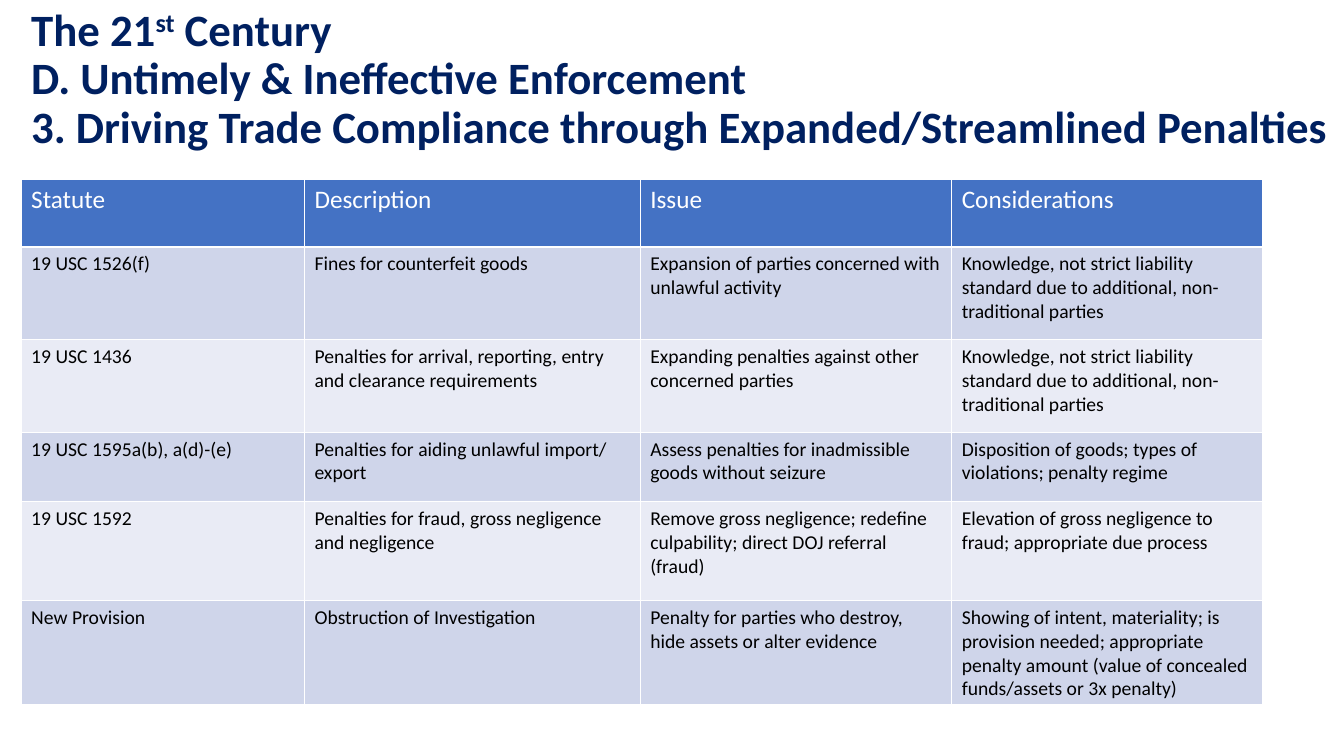
"""Build a slide tabulating expanded and streamlined trade penalties."""
from dataclasses import dataclass

from pptx import Presentation
from pptx.dml.color import RGBColor as Color
from pptx.enum.text import MSO_ANCHOR as Anchor
from pptx.util import Inches, Pt

TITLE_START = ("The 21", "st", " Century")
TITLE_LINES = (
    "D. Untimely & Ineffective Enforcement",
    "3. Driving Trade Compliance through Expanded/Streamlined Penalties",
)
KNOWLEDGE = "Knowledge, not strict liability standard due to additional, non-traditional parties"
PENALTIES = (
    ("Statute", "Description", "Issue", "Considerations"),
    ("19 USC 1526(f)", "Fines for counterfeit goods",
     "Expansion of parties concerned with unlawful activity", KNOWLEDGE),
    ("19 USC 1436", "Penalties for arrival, reporting, entry and clearance requirements",
     "Expanding penalties against other concerned parties", KNOWLEDGE),
    ("19 USC 1595a(b), a(d)-(e)", "Penalties for aiding unlawful import/ export",
     "Assess penalties for inadmissible goods without seizure",
     "Disposition of goods; types of violations; penalty regime"),
    ("19 USC 1592", "Penalties for fraud, gross negligence and negligence",
     "Remove gross negligence; redefine culpability; direct DOJ referral (fraud)",
     "Elevation of gross negligence to fraud; appropriate due process"),
    ("New Provision", "Obstruction of Investigation",
     "Penalty for parties who destroy, hide assets or alter evidence",
     "Showing of intent, materiality; is provision needed; appropriate penalty amount "
     "(value of concealed funds/assets or 3x penalty)"),
)
COLUMN_WIDTHS = (2.81, 3.33, 3.09, 3.08)
ROW_HEIGHTS = (0.67, 0.92, 0.92, 0.69, 0.98, 0.98)
LEFT, TITLE_TOP, TABLE_TOP = 0.21, 0.07, 1.78


@dataclass(frozen=True)
class Theme:
    font: str = "Calibri"
    title: str = "002060"
    header: str = "4472C4"
    header_text: str = "FFFFFF"
    body_text: str = "000000"
    bands: tuple = ("CFD5EA", "E9EBF5")
    title_size: int = 32
    header_size: int = 18
    body_size: int = 14


THEME = Theme()


def style_font(font, size, color, bold=False):
    font.name, font.size, font.bold = THEME.font, Pt(size), bold
    font.color.rgb = Color.from_string(color)


def add_title(slide):
    box = slide.shapes.add_textbox(Inches(LEFT), Inches(TITLE_TOP), Inches(13.12), Inches(1.45))
    frame = box.text_frame
    frame.word_wrap = True
    frame.vertical_anchor = Anchor.MIDDLE
    paragraph = frame.paragraphs[0]
    paragraph.line_spacing = 0.9
    style_font(paragraph.font, THEME.title_size, THEME.title, bold=True)
    runs = [paragraph.add_run() for _ in TITLE_START]
    for run, text in zip(runs, TITLE_START):
        run.text = text
    runs[1].font._element.set("baseline", "30000")
    for line in TITLE_LINES:
        paragraph.add_line_break()
        paragraph.add_run().text = line


def fill_cell(cell, text, row):
    is_header = row == 0
    cell.text = text
    cell.fill.solid()
    fill = THEME.header if is_header else THEME.bands[(row - 1) % 2]
    cell.fill.fore_color.rgb = Color.from_string(fill)
    size = THEME.header_size if is_header else THEME.body_size
    color = THEME.header_text if is_header else THEME.body_text
    style_font(cell.text_frame.paragraphs[0].font, size, color)


def add_penalty_table(slide):
    table = slide.shapes.add_table(
        len(PENALTIES), len(COLUMN_WIDTHS), Inches(LEFT), Inches(TABLE_TOP),
        Inches(sum(COLUMN_WIDTHS)), Inches(sum(ROW_HEIGHTS))).table
    for column, width in zip(table.columns, COLUMN_WIDTHS):
        column.width = Inches(width)
    for row, height in zip(table.rows, ROW_HEIGHTS):
        row.height = Inches(height)
    for row, texts in enumerate(PENALTIES):
        for column, text in enumerate(texts):
            fill_cell(table.cell(row, column), text, row)


def main():
    presentation = Presentation()
    presentation.slide_width, presentation.slide_height = Inches(13.33), Inches(7.5)
    slide = presentation.slides.add_slide(presentation.slide_layouts[6])
    add_title(slide)
    add_penalty_table(slide)
    presentation.save("out.pptx")


if __name__ == "__main__":
    main()
